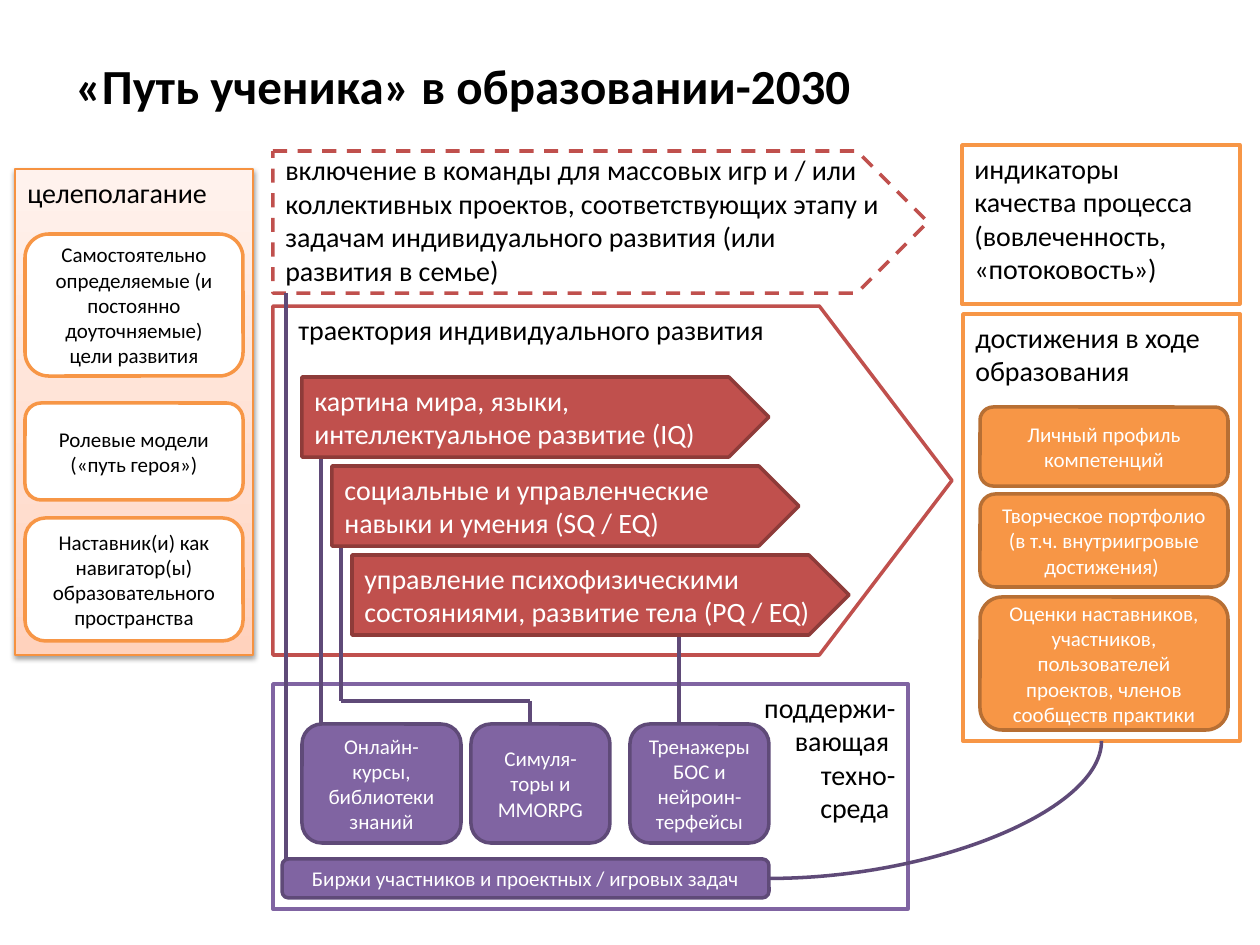
"""Build the one-slide diagram of a student's path in education 2030."""
from copy import deepcopy
from dataclasses import dataclass

from lxml import etree
from pptx import Presentation
from pptx.dml.color import RGBColor
from pptx.enum.dml import MSO_LINE
from pptx.enum.shapes import MSO_CONNECTOR, MSO_SHAPE
from pptx.enum.text import MSO_ANCHOR, MSO_AUTO_SIZE, PP_ALIGN
from pptx.oxml.ns import qn
from pptx.util import Emu, Pt

RECT, ROUND, ARROW = MSO_SHAPE.RECTANGLE, MSO_SHAPE.ROUNDED_RECTANGLE, MSO_SHAPE.PENTAGON
STRAIGHT, CURVE = MSO_CONNECTOR.STRAIGHT, MSO_CONNECTOR.CURVE
LEFT, CENTER, RIGHT = PP_ALIGN.LEFT, PP_ALIGN.CENTER, PP_ALIGN.RIGHT
TOP, MIDDLE, BOTTOM = MSO_ANCHOR.TOP, MSO_ANCHOR.MIDDLE, MSO_ANCHOR.BOTTOM
DASH = MSO_LINE.DASH
RIGHT_SIDE, BOTTOM_SIDE = 3, 2
PX_PER_INCH = 126


@dataclass(frozen=True)
class Theme:
    font: str = "Calibri"
    title: int = 28
    heading: int = 16
    label: int = 12
    line: float = 2
    thin: float = 0.75
    black: str = "000000"
    white: str = "FFFFFF"
    red: str = "C0504D"
    dark_red: str = "8E3B39"
    purple: str = "8064A2"
    dark_purple: str = "5F4A78"
    orange: str = "F79646"
    dark_orange: str = "B76F34"
    goal_edge: str = "F69240"
    goal_stops: tuple = ((0, "FFD2BD"), (0.35, "FFDED0"), (1, "FFF2ED"))


THEME = Theme()


@dataclass(frozen=True)
class Look:
    kind: int
    fill: str
    edge: str
    ink: str
    size: int
    align: int = LEFT
    anchor: int = TOP


@dataclass(frozen=True)
class Box:
    text: str
    left: int
    top: int
    width: int
    height: int
    look: Look


@dataclass(frozen=True)
class Link:
    x1: int
    y1: int
    x2: int
    y2: int


HEAD, LABEL = THEME.heading, THEME.label
RESULT_PANEL = Look(RECT, THEME.white, THEME.orange, THEME.black, HEAD)
GOAL_PANEL = Look(RECT, THEME.white, THEME.goal_edge, THEME.black, HEAD)
TECH_PANEL = Look(RECT, THEME.white, THEME.purple, THEME.black, HEAD, RIGHT)
PATH_PANEL = Look(ARROW, THEME.white, THEME.red, THEME.black, HEAD)
TEAM_PANEL = Look(ARROW, THEME.white, THEME.red, THEME.black, HEAD, LEFT, BOTTOM)
SKILL = Look(ARROW, THEME.red, THEME.dark_red, THEME.white, HEAD)
TOOL = Look(ROUND, THEME.purple, THEME.dark_purple, THEME.white, LABEL, CENTER, MIDDLE)
RESULT = Look(ROUND, THEME.orange, THEME.dark_orange, THEME.white, LABEL, CENTER, MIDDLE)
GOAL = Look(ROUND, THEME.white, THEME.orange, THEME.black, LABEL, CENTER, MIDDLE)

GOALS = Box("целеполагание", 15, 169, 238, 486, GOAL_PANEL)
PATH = Box("траектория индивидуального развития", 273, 306, 679, 349, PATH_PANEL)
TECH = Box("поддержи-\vвающая \vтехно-\vсреда ", 273, 684, 635, 225, TECH_PANEL)
TEAMS = Box("включение в команды для массовых игр и / или коллективных проектов, "
            "соответствующих этапу и задачам индивидуального развития "
            "(или развития в семье)", 273, 151, 655, 142, TEAM_PANEL)
INDICATORS = Box("индикаторы качества процесса (вовлеченность, «потоковость»)",
                 962, 145, 278, 159, RESULT_PANEL)
ACHIEVEMENTS = Box("достижения в ходе образования", 963, 314, 277, 427, RESULT_PANEL)
EXCHANGE = Box("Биржи участников и проектных / игровых задач", 282, 859, 487, 39, TOOL)

LINKS = (
    Link(341, 546, 341, 701), Link(530, 701, 341, 701), Link(530, 701, 530, 724),
    Link(679, 635, 679, 724), Link(321, 456, 321, 724), Link(286, 293, 286, 861),
)
BLOCKS = (
    Box("картина мира, языки, интеллектуальное развитие (IQ)", 302, 377, 467, 80, SKILL),
    Box("социальные и управленческие навыки и умения (SQ / EQ)", 332, 466, 467, 80, SKILL),
    Box("управление психофизическими состояниями, развитие тела (PQ / EQ)",
        352, 555, 497, 80, SKILL),
    Box("Онлайн-курсы, библиотеки знаний", 302, 724, 159, 119, TOOL),
    Box("Симуля-торы и MMORPG", 471, 724, 139, 119, TOOL),
    Box("Тренажеры БОС и нейроин-терфейсы", 630, 724, 139, 119, TOOL),
    Box("Личный профиль компетенций", 980, 407, 248, 79, RESULT),
    Box("Творческое портфолио (в т.ч. внутриигровые достижения) ", 980, 494, 248, 93, RESULT),
    Box("Оценки наставников, участников, пользователей проектов, членов сообществ практики",
        980, 597, 248, 133, RESULT),
    Box("Самостоятельно определяемые (и постоянно доуточняемые) цели развития",
        25, 234, 218, 142, GOAL),
    Box("Ролевые модели («путь героя»)", 25, 403, 218, 97, GOAL),
    Box("Наставник(и) как навигатор(ы) образовательного пространства",
        25, 518, 218, 123, GOAL),
)


def px(value: int) -> Emu:
    return Emu(round(value * 914400 / PX_PER_INCH))


def rgb(value: str) -> RGBColor:
    return RGBColor.from_string(value)


def write(frame, text: str, size: int, ink: str, align: int, bold: bool = False) -> None:
    frame.word_wrap = True
    frame.text = text
    for para in frame.paragraphs:
        para.alignment = align
        for span in para.runs:
            span.font.name = THEME.font
            span.font.size = Pt(size)
            span.font.bold = bold
            span.font.color.rgb = rgb(ink)


def draw_box(page, box: Box):
    look = box.look
    shape = page.shapes.add_shape(look.kind, px(box.left), px(box.top),
                                  px(box.width), px(box.height))
    shape.shadow.inherit = False
    shape.fill.solid()
    shape.fill.fore_color.rgb = rgb(look.fill)
    shape.line.color.rgb = rgb(look.edge)
    shape.line.width = Pt(THEME.line)
    shape.text_frame.vertical_anchor = look.anchor
    write(shape.text_frame, box.text, look.size, look.ink, look.align)
    return shape


def draw_link(page, link: Link, kind: int = STRAIGHT):
    line = page.shapes.add_connector(kind, px(link.x1), px(link.y1), px(link.x2), px(link.y2))
    line.line.color.rgb = rgb(THEME.dark_purple)
    line.line.width = Pt(THEME.line)
    etree.SubElement(line.element.spPr, qn("a:effectLst"))
    return line


def shade_goals(shape) -> None:
    shape.line.width = Pt(THEME.thin)
    shape.fill.gradient()
    shape.fill.gradient_angle = 90
    stops = shape.element.find(".//" + qn("a:gsLst"))
    stops.append(deepcopy(stops[-1]))
    for stop, (position, color) in zip(shape.fill.gradient_stops, THEME.goal_stops):
        stop.position = position
        stop.color.rgb = rgb(color)
    effects = shape.element.spPr.find(qn("a:effectLst"))
    shadow = etree.SubElement(effects, qn("a:outerShdw"), blurRad="40000", dist="20000",
                              dir="5400000", rotWithShape="0")
    color = etree.SubElement(shadow, qn("a:srgbClr"), val=THEME.black)
    etree.SubElement(color, qn("a:alpha"), val="38000")


def draw_title(page) -> None:
    title = page.shapes.title
    title.left, title.top, title.width, title.height = px(63), px(49), px(810), px(72)
    title.text_frame.auto_size = MSO_AUTO_SIZE.NONE
    title.text_frame.vertical_anchor = MIDDLE
    write(title.text_frame, "«Путь ученика» в образовании-2030", THEME.title,
          THEME.black, LEFT, True)


def main() -> None:
    deck = Presentation()
    deck.slide_width, deck.slide_height = px(1260), px(945)
    page = deck.slides.add_slide(deck.slide_layouts[5])
    draw_title(page)
    shade_goals(draw_box(page, GOALS))
    path = draw_box(page, PATH)
    path.adjustments[0] = 0.38
    path.text_frame.paragraphs[0]._p.get_or_add_pPr().set("marL", str(px(13)))
    draw_box(page, TECH)
    draw_box(page, TEAMS).line.dash_style = DASH
    draw_box(page, INDICATORS)
    achievements = draw_box(page, ACHIEVEMENTS)
    for link in LINKS:
        draw_link(page, link)
    for block in BLOCKS:
        draw_box(page, block)
    exchange = draw_box(page, EXCHANGE)
    curve = draw_link(page, Link(769, 879, 1101, 741), CURVE)
    curve.element.spPr.find(qn("a:prstGeom")).set("prst", "curvedConnector2")
    curve.begin_connect(exchange, RIGHT_SIDE)
    curve.end_connect(achievements, BOTTOM_SIDE)
    deck.save("out.pptx")


if __name__ == "__main__":
    main()
